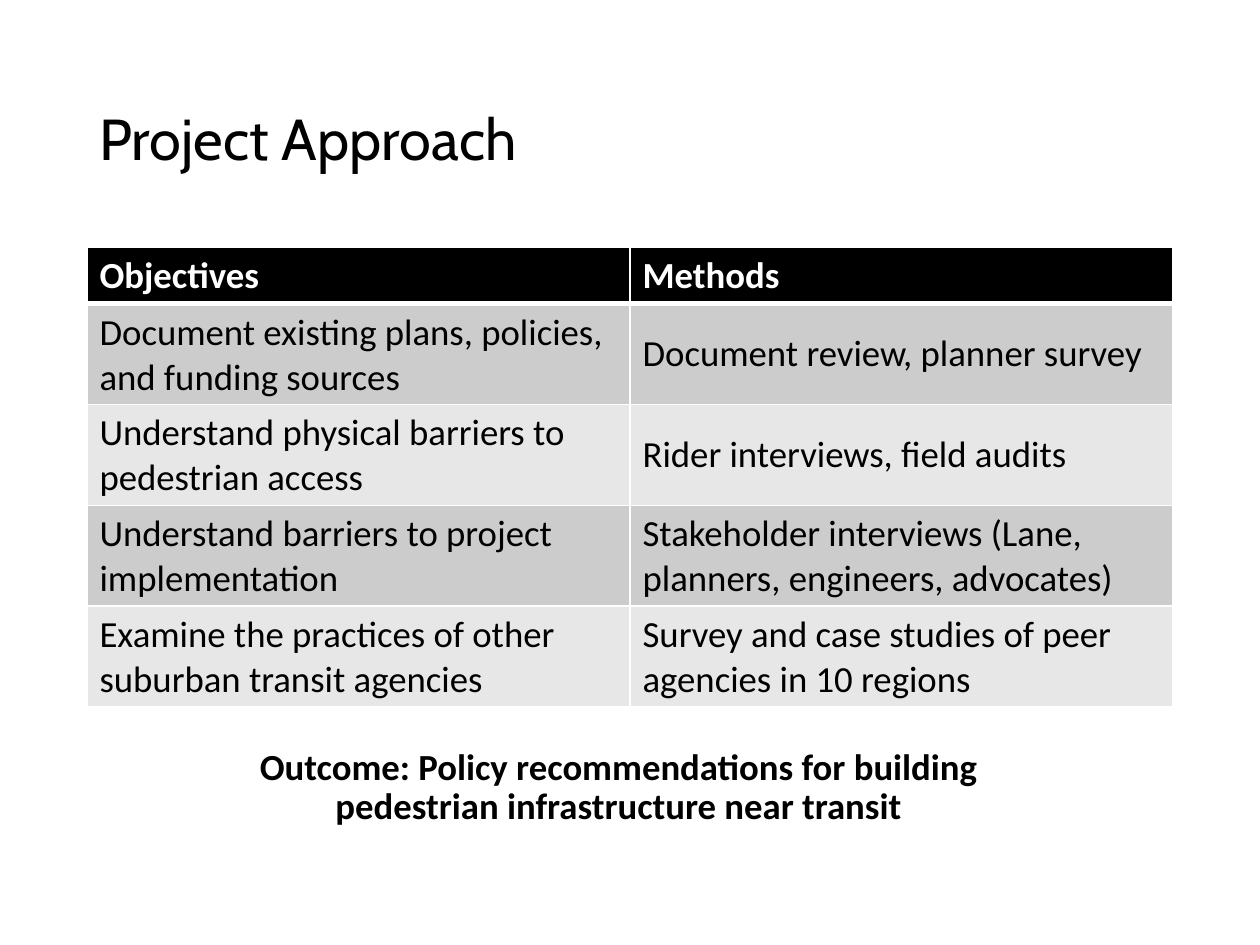
from lxml.etree import SubElement as Sub
from pptx import Presentation
from pptx.dml.color import RGBColor as RGB
from pptx.enum.text import MSO_ANCHOR as Anchor, PP_ALIGN as Align
from pptx.oxml.ns import qn
from pptx.util import Inches, Pt

COLORS = {"ink": "000000", "paper": "FFFFFF", "dark": "CCCCCC", "light": "E7E7E7"}

ROWS = [
    ("Objectives", "Methods"),
    ("Document existing plans, policies, and funding sources",
     "Document review, planner survey"),
    ("Understand physical barriers to pedestrian access",
     "Rider interviews, field audits"),
    ("Understand barriers to project implementation",
     "Stakeholder interviews (Lane, planners, engineers, advocates)"),
    ("Examine the practices of other suburban transit agencies",
     "Survey and case studies of peer agencies in 10 regions"),
]


class Deck:
    head = "Cabin"
    body = "Calibri"
    size = 21

    def __init__(self, slide):
        self.slide = slide

    def style(self, para, font, size, color="ink", bold=False):
        para.font.name = font
        para.font.size = Pt(size)
        para.font.bold = bold
        para.font.color.rgb = RGB.from_string(COLORS[color])

    def text(self, words, box, font, size, bold=False,
             align=Align.LEFT, anchor=Anchor.TOP):
        frame = self.slide.shapes.add_textbox(*map(Inches, box)).text_frame
        frame.word_wrap = True
        frame.vertical_anchor = anchor
        para = frame.paragraphs[0]
        para.text = words
        para.alignment = align
        para.line_spacing = 0.9
        self.style(para, font, size, bold=bold)

    def edge(self, cell, side, width):
        """Draw one white border; call before the cell is filled."""
        line = Sub(cell._tc.get_or_add_tcPr(), qn(f"a:ln{side}"), w=str(Pt(width)))
        fill = Sub(line, qn("a:solidFill"))
        Sub(fill, qn("a:srgbClr"), val=COLORS["paper"])

    def cell(self, cell, words, row):
        top = row == 0
        for side in "LRTB":
            thick = (top and side == "B") or (row == 1 and side == "T")
            self.edge(cell, side, 3 if thick else 1)
        shade = "ink" if top else ("dark" if row % 2 else "light")
        cell.fill.solid()
        cell.fill.fore_color.rgb = RGB.from_string(COLORS[shade])
        cell.vertical_anchor = Anchor.TOP if top else Anchor.MIDDLE
        cell.text = words
        self.style(cell.text_frame.paragraphs[0], self.body, self.size,
                   "paper" if top else "ink", top)

    def table(self, rows, left, top, width, height, step):
        """Start each row at the step height; rows grow with their text."""
        frame = self.slide.shapes.add_table(
            len(rows), len(rows[0]), Inches(left), Inches(top),
            Inches(width), Inches(step * len(rows)))
        for r, row in enumerate(rows):
            for c, words in enumerate(row):
                self.cell(frame.table.cell(r, c), words, r)
        frame.height = Inches(height)


def main():
    prs = Presentation()
    prs.slide_width, prs.slide_height = Inches(10), Inches(7.5)
    deck = Deck(prs.slides.add_slide(prs.slide_layouts[6]))
    deck.text("Project Approach", (0.69, 0.4, 8.62, 1.45), deck.head, 33,
              anchor=Anchor.MIDDLE)
    deck.table(ROWS, 0.69, 1.96, 8.62, 3.65, 0.41)
    deck.text("Outcome: Policy recommendations for building "
              "pedestrian infrastructure near transit",
              (1.72, 5.89, 6.38, 1.01), deck.body, deck.size,
              bold=True, align=Align.CENTER)
    prs.save("out.pptx")


if __name__ == "__main__":
    main()
